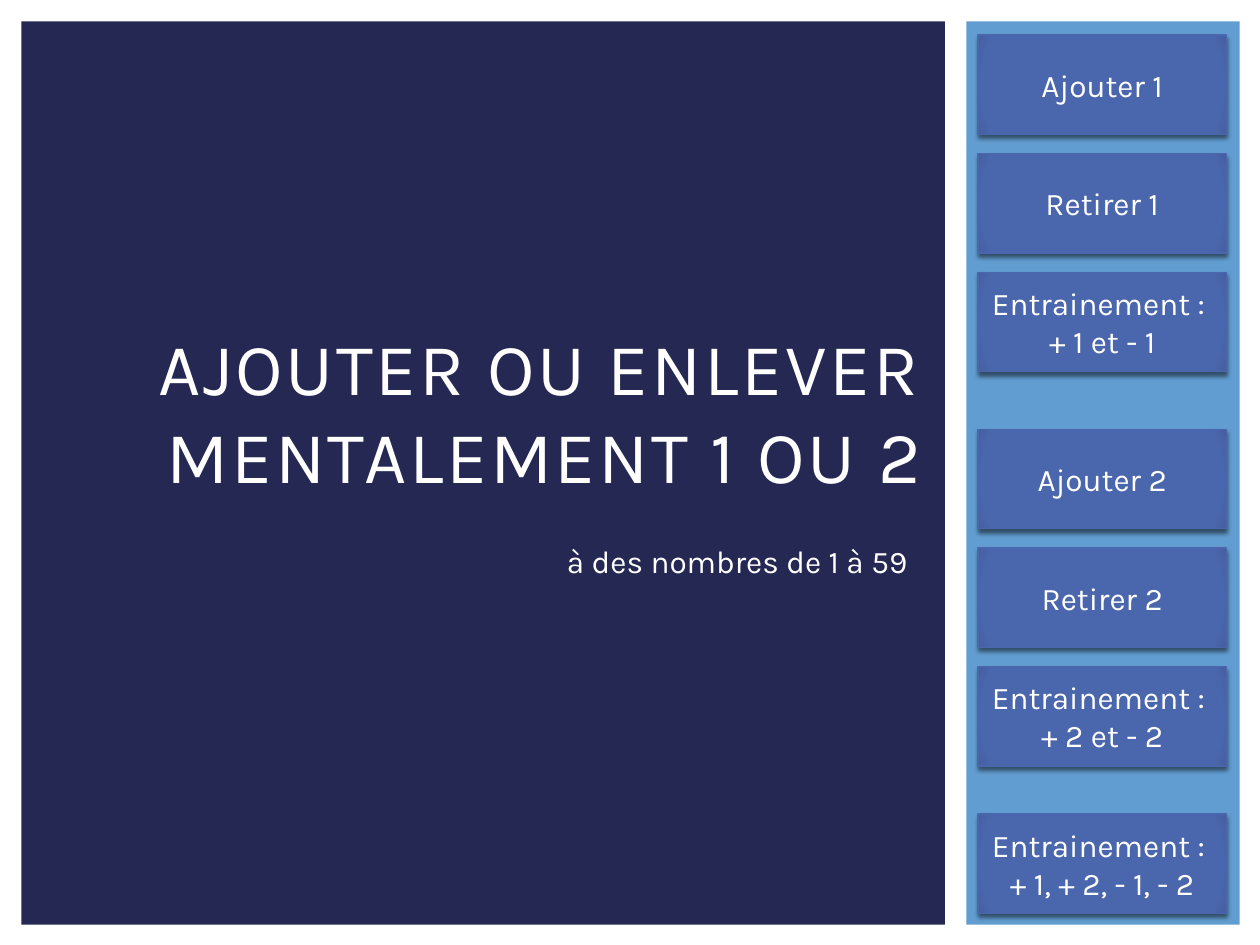
from dataclasses import dataclass

from pptx import Presentation
from pptx.dml.color import RGBColor as RGB
from pptx.enum.shapes import MSO_SHAPE as Kind
from pptx.enum.text import MSO_ANCHOR as Anchor, MSO_AUTO_SIZE as Fit, PP_ALIGN as Align
from pptx.oxml import parse_xml
from pptx.oxml.ns import nsdecls
from pptx.util import Cm, Pt


@dataclass(frozen=True)
class Theme:
    font: str = "Karla"
    navy: str = "242852"
    sky: str = "629DD1"
    blue: str = "4A66AC"
    edge: str = "455FA0"
    white: str = "FFFFFF"
    shade: str = "000000"
    large: int = 42
    small: int = 18


THEME = Theme()

# Button labels by group, each with its offset from the top of the column (cm)
GROUPS = [
    (0.28, ["Ajouter 1", "Retirer 1", "Entrainement : \n+ 1 et - 1"]),
    (8.23, ["Ajouter 2", "Retirer 2", "Entrainement : \n+ 2 et - 2"]),
    (15.98, ["Entrainement : \n+ 1, + 2, - 1, - 2"]),
]
STEP = 2.39


def write(frame, text, size, align):
    frame.text = text
    for par in frame.paragraphs:
        par.alignment = align
        for run in par.runs:
            run.font.name = THEME.font
            run.font.size = Pt(size)
            run.font.color.rgb = RGB.from_string(THEME.white)


def panel(slide, box, color):
    shape = slide.shapes.add_shape(Kind.RECTANGLE, *map(Cm, box))
    shape.shadow.inherit = False
    shape.fill.solid()
    shape.fill.fore_color.rgb = RGB.from_string(color)
    shape.line.fill.background()


def relief(shape):
    """Give a shape a radial fill and a soft shadow below it."""
    stops = [(0, THEME.blue), (90, THEME.blue), (100, THEME.edge)]
    marks = "".join(
        f'<a:gs pos="{pos * 1000}"><a:srgbClr val="{color}"/></a:gs>'
        for pos, color in stops)
    props = shape._element.spPr
    props.prstGeom.addnext(parse_xml(
        f'<a:gradFill {nsdecls("a")} rotWithShape="1"><a:gsLst>{marks}</a:gsLst>'
        '<a:path path="circle"><a:fillToRect l="100000" t="100000" '
        'r="100000" b="100000"/></a:path></a:gradFill>'))
    shape.shadow.inherit = False
    props.effectLst.append(parse_xml(
        f'<a:outerShdw {nsdecls("a")} blurRad="{Pt(2.5)}" dist="{Pt(2)}" '
        'dir="5400000" algn="ctr" rotWithShape="0">'
        f'<a:srgbClr val="{THEME.shade}"><a:alpha val="50000"/></a:srgbClr>'
        '</a:outerShdw>'))


def button(slide, box, text):
    shape = slide.shapes.add_shape(Kind.ACTION_BUTTON_CUSTOM, *map(Cm, box))
    shape.line.color.rgb = RGB.from_string(THEME.blue)
    shape.line.width = Pt(0.79)
    relief(shape)
    shape.text_frame.vertical_anchor = Anchor.MIDDLE
    write(shape.text_frame, text, THEME.small, Align.CENTER)


def menu(slide, box):
    left, top, _, _ = box
    panel(slide, box, THEME.sky)
    for start, labels in GROUPS:
        for row, text in enumerate(labels):
            button(slide, (left + 0.24, top + start + row * STEP, 5, 2), text)


def cover(slide, box):
    left, top, _, _ = box
    panel(slide, box, THEME.navy)

    # Title, brought in front of the panel
    title = slide.shapes.title
    slide.shapes._spTree.append(title._element)
    title.left, title.top = Cm(left + 0.84), Cm(top + 5.29)
    title.width, title.height = Cm(17.57), Cm(5.08)
    frame = title.text_frame
    frame.word_wrap = True
    frame.auto_size = Fit.NONE
    frame.vertical_anchor = Anchor.MIDDLE
    write(frame, "AJOUTER OU ENLEVER MENTALEMENT 1 OU 2", THEME.large, Align.RIGHT)
    frame.paragraphs[0].runs[0].font._element.set("spc", "150")

    # Subtitle
    note = slide.shapes.add_textbox(Cm(left + 10.75), Cm(top + 10.37), Cm(7.39), Cm(1.02))
    note.text_frame.word_wrap = False
    note.text_frame.auto_size = Fit.SHAPE_TO_FIT_TEXT
    write(note.text_frame, "à des nombres de 1 à 59", THEME.small, Align.LEFT)


def main():
    deck = Presentation()
    deck.slide_width, deck.slide_height = Cm(25.4), Cm(19.05)
    slide = deck.slides.add_slide(deck.slide_layouts[5])
    slide.background.fill.solid()
    slide.background.fill.fore_color.rgb = RGB.from_string(THEME.white)
    cover(slide, (0.43, 0.43, 18.62, 18.21))
    menu(slide, (19.48, 0.43, 5.51, 18.21))
    deck.save("out.pptx")


if __name__ == "__main__":
    main()
